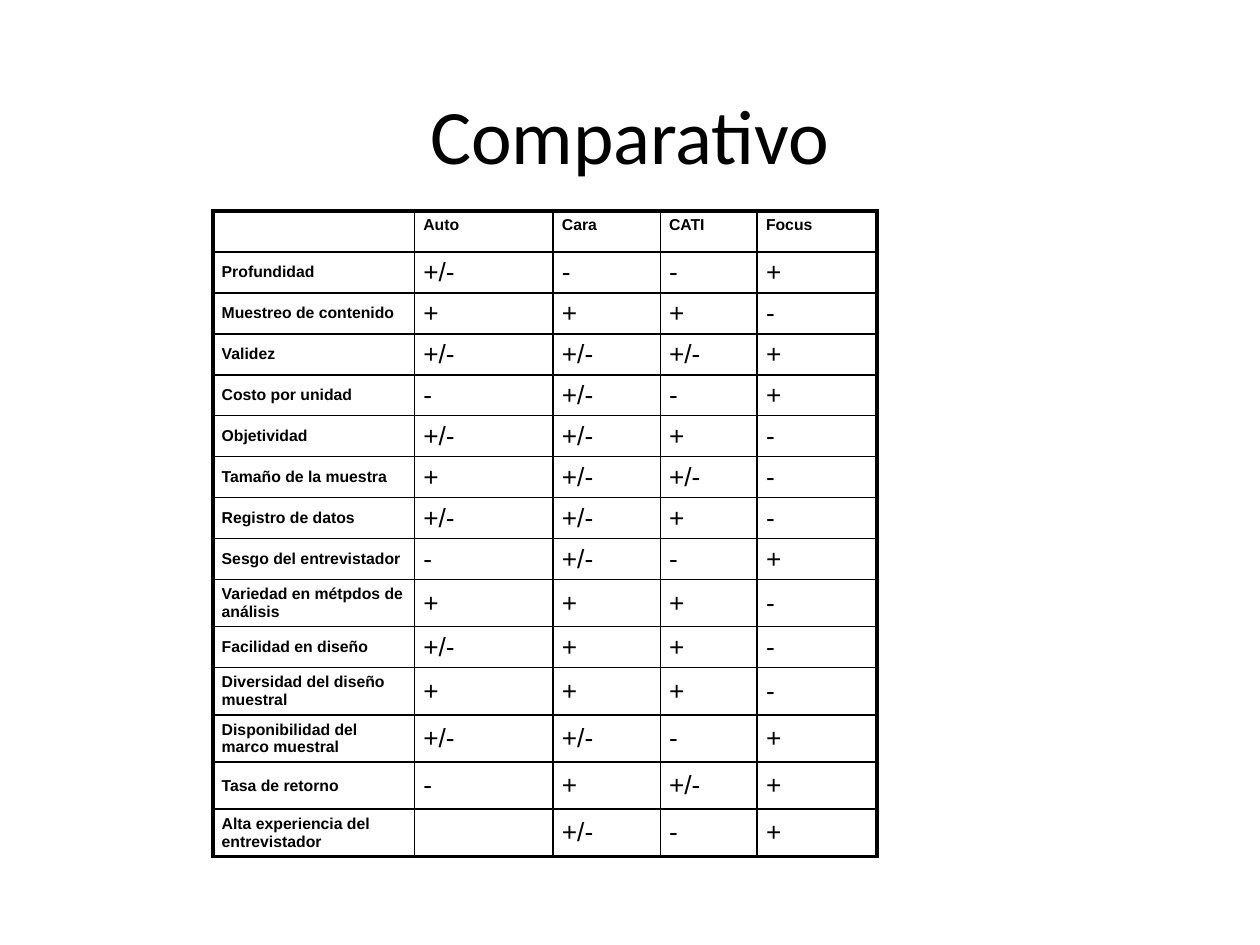
from dataclasses import dataclass

from pptx import Presentation
from pptx.dml.color import RGBColor
from pptx.enum.text import MSO_ANCHOR as Anchor, MSO_AUTO_SIZE as AutoSize, PP_ALIGN as Align
from pptx.oxml.ns import qn
from pptx.util import Inches, Pt
from lxml.etree import SubElement

COLUMN_UNITS, ROW_UNITS = 100, 300  # the page grid

HEADINGS = ["", "Auto", "Cara", "CATI", "Focus"]
CRITERIA = [
    ("Profundidad", "+/-", "-", "-", "+"),
    ("Muestreo de contenido", "+", "+", "+", "-"),
    ("Validez", "+/-", "+/-", "+/-", "+"),
    ("Costo por unidad", "-", "+/-", "-", "+"),
    ("Objetividad", "+/-", "+/-", "+", "-"),
    ("Tamaño de la muestra", "+", "+/-", "+/-", "-"),
    ("Registro de datos", "+/-", "+/-", "+", "-"),
    ("Sesgo del entrevistador", "-", "+/-", "-", "+"),
    ("Variedad en métpdos de análisis", "+", "+", "+", "-"),
    ("Facilidad en diseño", "+/-", "+", "+", "-"),
    ("Diversidad del diseño muestral", "+", "+", "+", "-"),
    ("Disponibilidad del marco muestral", "+/-", "+/-", "-", "+"),
    ("Tasa de retorno", "-", "+", "+/-", "+"),
    ("Alta experiencia del entrevistador", "", "+/-", "-", "+"),
]
COLUMN_WIDTHS = [16, 11, 8.5, 7.7, 9.5]
LOW_ROW, HIGH_ROW = 13, 15
HIGH_ROWS = {9, 11, 12, 13, 14}


@dataclass(frozen=True)
class Theme:
    ink: str = "000000"
    title_font: str = "Calibri"
    table_font: str = "Arial"
    title_size: float = 44
    label_size: float = 9
    mark_size: float = 15
    inner_line: float = 1
    outer_line: float = 2.25


class Page:
    def __init__(self, deck, theme):
        self.deck, self.theme = deck, theme
        self.slide = deck.slides.add_slide(deck.slide_layouts[5])

    def across(self, units):
        return round(self.deck.slide_width * units / COLUMN_UNITS)

    def down(self, units):
        return round(self.deck.slide_height * units / ROW_UNITS)

    def style(self, para, font, size, bold=False):
        for span in para.runs:
            span.font.name, span.font.size, span.font.bold = font, Pt(size), bold
            span.font.color.rgb = RGBColor.from_string(self.theme.ink)

    def title(self, text, left, top, width, height):
        box = self.slide.shapes.title
        box.left, box.width = self.across(left), self.across(width)
        box.top, box.height = self.down(top), self.down(height)
        frame = box.text_frame
        frame.text = text
        frame.auto_size = AutoSize.NONE
        frame.vertical_anchor = Anchor.MIDDLE
        frame.paragraphs[0].alignment = Align.CENTER
        self.style(frame.paragraphs[0], self.theme.title_font, self.theme.title_size)

    def table(self, records, left, top, widths, heights):
        last_row, last_column = len(records) - 1, len(widths) - 1
        table = self.slide.shapes.add_table(
            len(records), len(widths), self.across(left), self.down(top),
            self.across(sum(widths)), self.down(sum(heights))).table
        table.first_row = table.horz_banding = False
        for column, width in zip(table.columns, widths):
            column.width = self.across(width)
        for row, height in zip(table.rows, heights):
            row.height = self.down(height)
        for r, record in enumerate(records):
            for c, text in enumerate(record):
                cell = table.cell(r, c)
                self.fill_cell(cell, text, is_label=r == 0 or c == 0)
                cell.vertical_anchor = Anchor.TOP if r == 0 else Anchor.MIDDLE
                self.borders(cell, {"L": c == 0, "R": c == last_column,
                                    "T": r == 0, "B": r == last_row})

    def fill_cell(self, cell, text, is_label):
        size = self.theme.label_size if is_label else self.theme.mark_size
        cell.fill.background()
        cell.margin_left = cell.margin_right = Inches(0.07)
        cell.margin_top = cell.margin_bottom = Inches(0.04)
        cell.text_frame.text = text
        para = cell.text_frame.paragraphs[0]
        self.style(para, self.theme.table_font, size, is_label)
        if not text:  # keeps an empty cell from stretching its row
            SubElement(para._p, qn("a:endParaRPr"), sz=str(size * 100))

    def borders(self, cell, outer_sides):
        properties = cell._tc.get_or_add_tcPr()
        for position, (side, is_outer) in enumerate(outer_sides.items()):
            weight = self.theme.outer_line if is_outer else self.theme.inner_line
            line = SubElement(properties, qn(f"a:ln{side}"), w=str(Pt(weight)))
            fill = SubElement(line, qn("a:solidFill"))
            SubElement(fill, qn("a:srgbClr"), val=self.theme.ink)
            properties.insert(position, line)


def main():
    deck = Presentation()
    deck.slide_width, deck.slide_height = Inches(10), Inches(7.5)
    page = Page(deck, Theme())
    page.title("Comparativo", left=5, top=31.6, width=90, height=21.6)
    records = [HEADINGS, *CRITERIA]
    heights = [HIGH_ROW if r in HIGH_ROWS else LOW_ROW for r in range(len(records))]
    page.table(records, left=16.9, top=67, widths=COLUMN_WIDTHS, heights=heights)
    deck.save("out.pptx")


if __name__ == "__main__":
    main()
